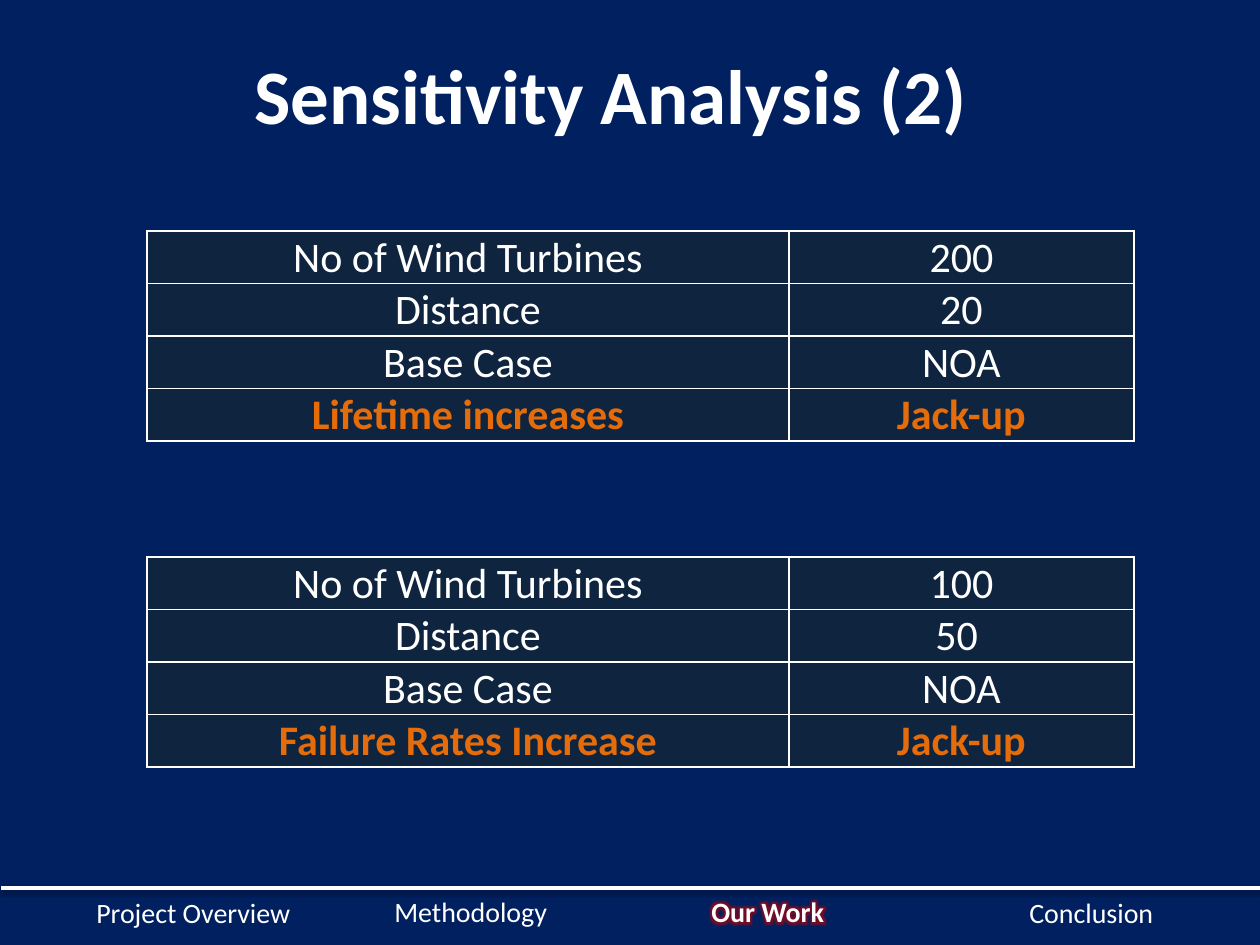
import lxml.etree
import pptx
import pptx.dml.color
import pptx.enum.shapes
import pptx.enum.text
import pptx.oxml
import pptx.oxml.ns
import pptx.util

EMU_PER_PX = 914400 / 126
PAGE_WIDTH, PAGE_HEIGHT = 1260, 945
FONT = "Calibri"
COLORS = {
    "navy": "002060",
    "cell": "0F243E",
    "white": "FFFFFF",
    "orange": "E46C0A",
    "glow": "C00000",
    "shadow": "000000",
}
TABLES = [
    (231, [("No of Wind Turbines", "200"), ("Distance", "20"),
           ("Base Case", "NOA"), ("Lifetime increases", "Jack-up")]),
    (557, [("No of Wind Turbines", "100"), ("Distance", "50 "),
           ("Base Case", "NOA"), ("Failure Rates Increase", "Jack-up")]),
]
SECTIONS = [
    (84, 2, "Project Overview"),
    (382, 1, "Methodology"),
    (699, 1, "Our Work"),
    (1017, 2, "Conclusion"),
]
CURRENT_SECTION = "Our Work"


def px(length):
    """Turn pixels into EMU."""
    return pptx.util.Emu(round(length * EMU_PER_PX))


def rgb(name):
    """Look up a named colour."""
    return pptx.dml.color.RGBColor.from_string(COLORS[name])


def element(xml):
    """Parse a drawing element whose root is in the a: namespace."""
    head, tail = xml.split(">", 1)
    space = " " + pptx.oxml.ns.nsdecls("a")
    if head.endswith("/"):
        return pptx.oxml.parse_xml(head[:-1] + space + "/>" + tail)
    return pptx.oxml.parse_xml(head + space + ">" + tail)


def add_span(para, text, size, color="white", bold=False):
    """Add one formatted run to a paragraph."""
    span = para.add_run()
    span.text = text
    span.font.size = pptx.util.Pt(size)
    span.font.bold = bold
    span.font.color.rgb = rgb(color)
    span.font.name = FONT
    return span


def add_title(page, left, top, width, height, text):
    """Place the title placeholder and fill it."""
    title = page.shapes.title
    title.left, title.top = px(left), px(top)
    title.width, title.height = px(width), px(height)
    frame = title.text_frame
    frame.vertical_anchor = pptx.enum.text.MSO_ANCHOR.MIDDLE
    para = frame.paragraphs[0]
    para.alignment = pptx.enum.text.PP_ALIGN.CENTER
    add_span(para, text, 44, bold=True)


def border_cell(cell):
    """Draw a thin white line on every side of a cell."""
    properties = cell._tc.get_or_add_tcPr()
    for index, side in enumerate(("lnL", "lnR", "lnT", "lnB")):
        properties.insert(index, element(
            f'<a:{side} w="12700"><a:solidFill>'
            f'<a:srgbClr val="{COLORS["white"]}"/></a:solidFill></a:{side}>'))


def fill_cell(cell, text, highlighted):
    """Format one table cell and write its text."""
    cell.fill.solid()
    cell.fill.fore_color.rgb = rgb("cell")
    cell.margin_left = cell.margin_right = cell.margin_top = px(1)
    cell.margin_bottom = 0
    cell.vertical_anchor = pptx.enum.text.MSO_ANCHOR.BOTTOM
    border_cell(cell)
    para = cell.text_frame.paragraphs[0]
    para.alignment = pptx.enum.text.PP_ALIGN.CENTER
    add_span(para, text, 24, "orange" if highlighted else "white", highlighted)


def add_case_table(page, left, top, width, height, rows):
    """Build a two-column case table whose last row is highlighted."""
    label_width = round(width * 0.65)
    table = page.shapes.add_table(
        len(rows), 2, px(left), px(top), px(width), px(height)).table
    table.columns[0].width = px(label_width)
    table.columns[1].width = px(width - label_width)
    for row_index, row in enumerate(rows):
        table.rows[row_index].height = px(height / len(rows))
        for column_index, text in enumerate(row):
            fill_cell(table.cell(row_index, column_index), text,
                      row_index == len(rows) - 1)


def add_glow(span):
    """Put a red glow around a run."""
    glow = element(
        '<a:effectLst><a:glow rad="101600">'
        f'<a:srgbClr val="{COLORS["glow"]}"><a:alpha val="60000"/></a:srgbClr>'
        '</a:glow></a:effectLst>')
    fill = span._r.get_or_add_rPr().find(pptx.oxml.ns.qn("a:solidFill"))
    fill.addnext(glow)


def add_footer(page, left, top, width):
    """Draw the footer rule and the section names under it."""
    rule = page.shapes.add_connector(
        pptx.enum.shapes.MSO_CONNECTOR.STRAIGHT,
        px(left + 1), px(top), px(left + width), px(top))
    rule.line.color.rgb = rgb("white")
    rule.line.width = pptx.util.Pt(2)
    rule._element.spPr.append(element(
        '<a:effectLst><a:outerShdw blurRad="39370" dist="20320" dir="5400000" '
        f'rotWithShape="0"><a:srgbClr val="{COLORS["shadow"]}">'
        '<a:alpha val="38000"/></a:srgbClr></a:outerShdw></a:effectLst>'))
    for offset, drop, text in SECTIONS:
        box = page.shapes.add_textbox(
            px(left + offset), px(top + drop - 1),
            px(min(277, width - offset)), px(47))
        box.text_frame.word_wrap = True
        current = text == CURRENT_SECTION
        span = add_span(box.text_frame.paragraphs[0], text, 16, bold=current)
        if current:
            add_glow(span)


def main():
    """Build and save the slide."""
    deck = pptx.Presentation()
    deck.slide_width, deck.slide_height = px(PAGE_WIDTH), px(PAGE_HEIGHT)
    page = deck.slides.add_slide(deck.slide_layouts[5])
    page.background.fill.solid()
    page.background.fill.fore_color.rgb = rgb("navy")
    add_footer(page, 0, 888, PAGE_WIDTH)
    for top, rows in TABLES:
        add_case_table(page, 147, top, 987, 210, rows)
    add_title(page, 44, 15, 1134, 158, "Sensitivity Analysis (2)")
    deck.save("out.pptx")


if __name__ == "__main__":
    main()
